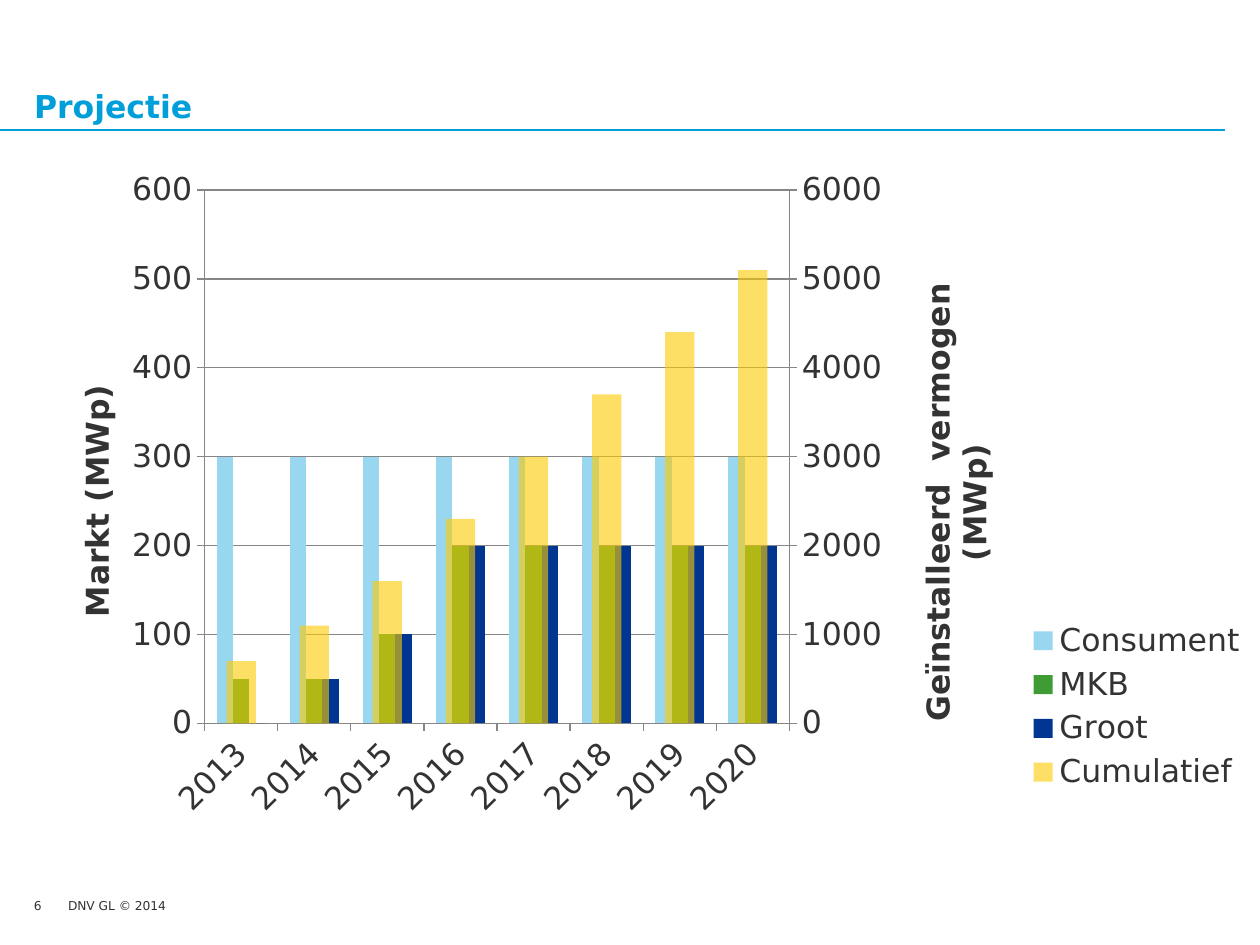
from copy import deepcopy

from lxml import etree
from pptx import Presentation
from pptx import util as u
from pptx.chart import axis as axes
from pptx.chart.data import CategoryChartData
from pptx.dml.color import RGBColor
from pptx.enum import chart as kinds, shapes, text
from pptx.oxml import ns

BLUE, DARK, GREY = "009FDA", "333333", "868686"
FONT = "DejaVu Sans"


def colour(code):
    return RGBColor.from_string(code)


def add_node(parent, tag, **attributes):
    return etree.SubElement(parent, ns.qn(tag), **attributes)


def place(node, index, **fractions):
    """Give a chart part a manual layout in fractions of the chart."""
    for old in node.findall(ns.qn("c:layout")):
        node.remove(old)
    layout = etree.Element(ns.qn("c:layout"))
    manual = add_node(layout, "c:manualLayout")
    if index == 0:
        add_node(manual, "c:layoutTarget", val="inner")
    for side in "xy":
        add_node(manual, f"c:{side}Mode", val="edge")
    for name, value in fractions.items():
        add_node(manual, f"c:{name}", val=str(value))
    node.insert(index, layout)


class SlideStyle:
    def __init__(self, page):
        self.page = page

    def font(self, font, size, code=DARK, bold=False):
        font.name, font.size, font.bold = FONT, u.Pt(size), bold
        font.color.rgb = colour(code)

    def label(self, words, left, top, width, height, size, code=DARK,
              bold=False, anchor=text.MSO_ANCHOR.TOP, wrap=True):
        box = self.page.shapes.add_textbox(
            *map(u.Inches, (left, top, width, height)))
        frame = box.text_frame
        frame.margin_left = frame.margin_right = 0
        frame.margin_top = frame.margin_bottom = 0
        frame.word_wrap, frame.vertical_anchor = wrap, anchor
        frame.text = words
        self.font(frame.paragraphs[0].runs[0].font, size, code, bold)

    def rule(self, left, top, right, code, weight):
        line = self.page.shapes.add_connector(
            shapes.MSO_CONNECTOR.STRAIGHT,
            *map(u.Inches, (left, top, right, top)))
        line.line.color.rgb = colour(code)
        line.line.width = u.Pt(weight)
        add_node(line._element.spPr, "a:effectLst")

    def axis_title(self, axis, words, x, y):
        axis.has_title = True
        frame = axis.axis_title.text_frame
        frame.text = words
        self.font(frame.paragraphs[0].runs[0].font, 18, bold=True)
        title = axis._element.find(ns.qn("c:title"))
        body = title.find(".//" + ns.qn("a:bodyPr"))
        body.set("rot", "-5400000")
        body.set("vert", "horz")
        place(title, 1, x=x, y=y)

    def column_chart(self, categories, series, left, top, width, height):
        data = CategoryChartData()
        data.categories = categories
        for name, values, _ in series:
            data.add_series(name, values)
        chart = self.page.shapes.add_chart(
            kinds.XL_CHART_TYPE.COLUMN_CLUSTERED,
            *map(u.Inches, (left, top, width, height)), data).chart
        self.font(chart.font, 18)
        chart.has_title = False
        plot = chart.plots[0]
        plot.gap_width, plot.overlap, plot.vary_by_categories = 150, 0, False
        for bars, (_, _, code) in zip(plot.series, series):
            bars.format.fill.solid()
            bars.format.fill.fore_color.rgb = colour(code)
            bars.invert_if_negative = False
        for axis in (chart.category_axis, chart.value_axis):
            axis.format.line.color.rgb = colour(GREY)
            axis.major_tick_mark = kinds.XL_TICK_MARK.OUTSIDE
            self.font(axis.tick_labels.font, 18)
        return chart

    def legend(self, chart, **fractions):
        chart.has_legend = True
        chart.legend.position = kinds.XL_LEGEND_POSITION.RIGHT
        chart.legend.include_in_layout = False
        self.font(chart.legend.font, 18)
        place(chart.legend._element, 1, **fractions)

    def last_series_on_right(self, chart, alpha):
        """Move the last series to a second plot with its own axes."""
        bars = chart.element.find(".//" + ns.qn("c:barChart"))
        right_bars = deepcopy(bars)
        bars.remove(bars.findall(ns.qn("c:ser"))[-1])
        for extra in right_bars.findall(ns.qn("c:ser"))[:-1]:
            right_bars.remove(extra)
        fill = right_bars.find(".//" + ns.qn("a:srgbClr"))
        add_node(fill, "a:alpha", val=str(alpha * 1000))
        bars.addnext(right_bars)

        left_axes = [chart.category_axis._element, chart.value_axis._element]
        right_axes = [deepcopy(node) for node in left_axes]
        new_ids = {node.find(ns.qn("c:axId")).get("val"): str(9001 + i)
                   for i, node in enumerate(left_axes)}
        for node in [right_bars, *right_axes]:
            for tag in ("c:axId", "c:crossAx"):
                for link in node.findall(ns.qn(tag)):
                    link.set("val", new_ids[link.get("val")])
        category, value = right_axes
        left_axes[1].addnext(value)
        value.addnext(category)
        axes.CategoryAxis(category).visible = False
        value.find(ns.qn("c:axPos")).set("val", "r")
        value.find(ns.qn("c:crosses")).set("val", "max")
        return axes.ValueAxis(value)


def main():
    deck = Presentation()
    deck.slide_width, deck.slide_height = u.Inches(10), u.Inches(7.5)
    style = SlideStyle(deck.slides.add_slide(deck.slide_layouts[6]))

    # Footer and heading
    style.label("DNV GL © 2014", 0.54, 7.13, 0.8, 0.12, 7, wrap=False)
    style.rule(0, 1.03, 9.72, BLUE, 1)
    style.label("Projectie", 0.27, 0.26, 9.45, 0.73, 18, BLUE, True,
                text.MSO_ANCHOR.BOTTOM)

    # Yearly market on the left axis, cumulative power on the right
    business = [50, 50, 100] + [200] * 5
    large = [0, 50, 100] + [200] * 5
    series = [
        ("Consument", [300] * 8, "99D6F0"),
        ("MKB", business, "3F9C35"),
        ("Groot", large, "003591"),
        ("Cumulatief", [700, 1100, 1600, 2300, 3000, 3700, 4400, 5100],
         "FECB00"),
    ]
    years = [str(year) for year in range(2013, 2021)]
    chart = style.column_chart(years, series, 0.27, 1.24, 9.67, 5.36)
    labels = chart.category_axis._element.find(ns.qn("c:txPr"))
    labels.find(ns.qn("a:bodyPr")).set("rot", "-2700000")

    market = chart.value_axis
    market.minimum_scale, market.maximum_scale = 0, 600
    market.major_unit = 100
    market.has_major_gridlines = True
    market.major_gridlines.format.line.color.rgb = colour(GREY)

    installed = style.last_series_on_right(chart, 60)
    installed.maximum_scale, installed.major_unit = 6000, 1000
    installed.has_major_gridlines = False

    style.axis_title(market, "Markt (MWp)", 0.03, 0.33)
    style.axis_title(installed, "Geïnstalleerd  vermogen (MWp)", 0.72, 0.18)
    style.legend(chart, x=0.81, y=0.68, w=0.19, h=0.27)
    place(chart.element.find(".//" + ns.qn("c:plotArea")), 0,
          x=0.14, y=0.05, w=0.48, h=0.79)

    # Page number
    style.label("6", 0.27, 7.13, 0.26, 0.2, 7)

    deck.save("out.pptx")


if __name__ == "__main__":
    main()
